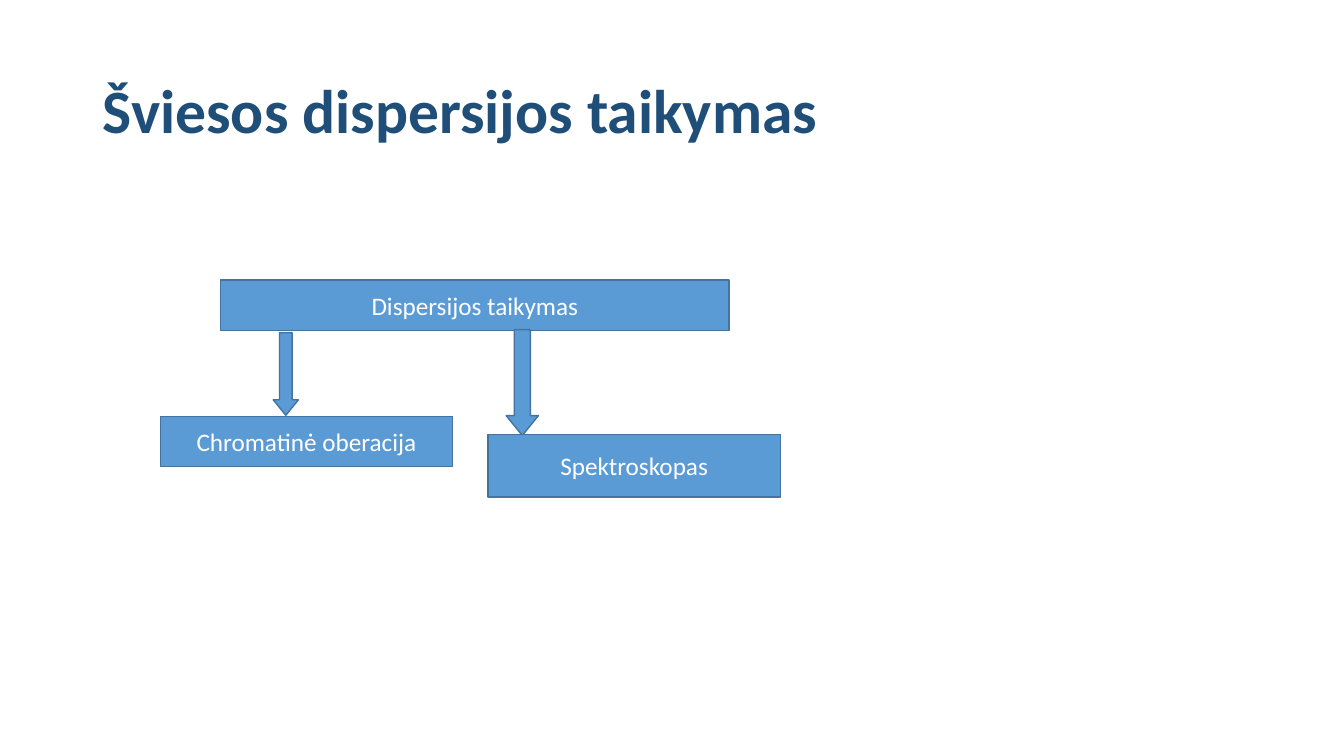
from pptx import Presentation
from pptx.dml.color import RGBColor
from pptx.enum.shapes import MSO_SHAPE
from pptx.enum.text import MSO_ANCHOR, PP_ALIGN
from pptx.util import Pt

PX = 9144  # 100 px to the inch
NAVY = RGBColor(0x1F, 0x4E, 0x79)
BLUE = RGBColor(0x5B, 0x9B, 0xD5)
EDGE = RGBColor(0x43, 0x73, 0x9E)
WHITE = RGBColor(0xFF, 0xFF, 0xFF)

HEAD = {"name": "Calibri", "size": Pt(44), "bold": True}
LABEL = {"name": "Calibri", "size": Pt(18), "bold": False}


def write(shape, text, form, color, align):
    frame = shape.text_frame
    frame.word_wrap = True
    frame.vertical_anchor = MSO_ANCHOR.MIDDLE
    line = frame.paragraphs[0]
    line.alignment = align
    run = line.add_run()
    run.text = text
    for key, value in form.items():
        setattr(run.font, key, value)
    run.font.color.rgb = color


deck = Presentation()
deck.slide_width, deck.slide_height = 1333 * PX, 750 * PX
slide = deck.slides.add_slide(deck.slide_layouts[5])

title = slide.shapes.title
place = {"left": 92, "top": 40, "width": 821, "height": 145}
for key, value in place.items():
    setattr(title, key, value * PX)
write(title, "Šviesos dispersijos taikymas", HEAD, NAVY, PP_ALIGN.LEFT)
title.text_frame.paragraphs[0].line_spacing = 0.9

# Back to front; a part without text is an arrow
parts = [
    ("Dispersijos taikymas", 219, 278, 504, 50),
    (None, 271, 330, 25, 82),
    ("Chromatinė oberacija", 159, 413, 290, 50),
    (None, 502, 327, 32, 105),
    ("Spektroskopas", 484, 431, 290, 62),
]
for text, *box in parts:
    kind = MSO_SHAPE.RECTANGLE if text else MSO_SHAPE.DOWN_ARROW
    shape = slide.shapes.add_shape(kind, *(n * PX for n in box))
    shape.shadow.inherit = False
    shape.fill.solid()
    shape.fill.fore_color.rgb = BLUE
    shape.line.color.rgb = EDGE
    shape.line.width = Pt(1)
    if text:
        write(shape, text, LABEL, WHITE, PP_ALIGN.CENTER)
    else:
        shape.adjustments[1] = 0.615

deck.save("out.pptx")
